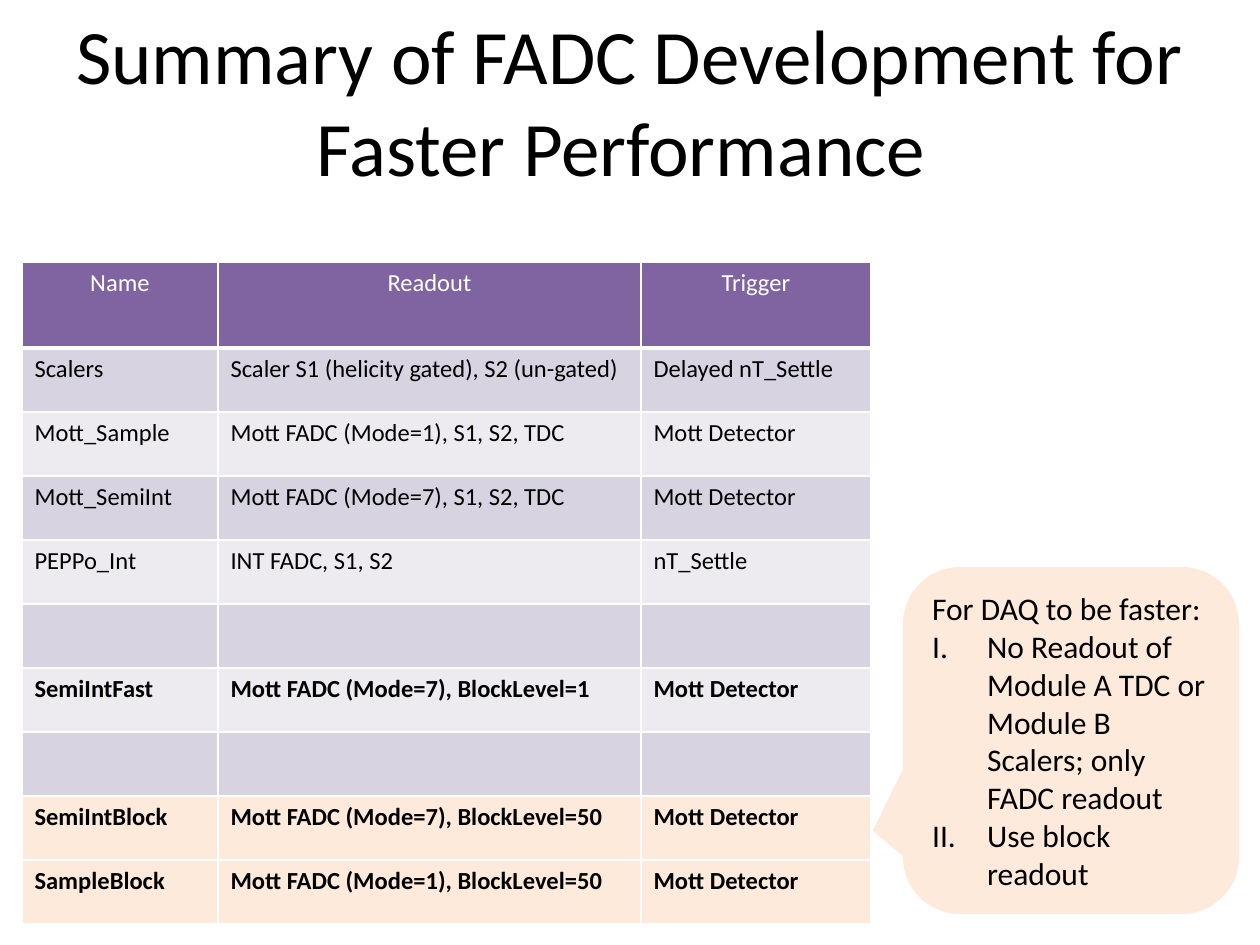
from lxml import etree
from pptx import Presentation
from pptx.dml.color import RGBColor
from pptx.enum.shapes import MSO_SHAPE
from pptx.enum.text import MSO_ANCHOR, PP_ALIGN
from pptx.oxml.ns import qn
from pptx.util import Pt

PX = 914400 // 126
CALLOUT = MSO_SHAPE.ROUNDED_RECTANGULAR_CALLOUT
MIDDLE = MSO_ANCHOR.MIDDLE
LEFT, CENTER = PP_ALIGN.LEFT, PP_ALIGN.CENTER
BLACK = RGBColor(0x00, 0x00, 0x00)
WHITE = RGBColor(0xFF, 0xFF, 0xFF)
PURPLE = RGBColor(0x80, 0x64, 0xA2)
LILAC = RGBColor(0xD8, 0xD3, 0xE0)
PALE = RGBColor(0xED, 0xEA, 0xF0)
PEACH = RGBColor(0xFD, 0xEA, 0xDA)


def write(para, text, size, color=BLACK, bold=False, align=LEFT):
    para.alignment = align
    run = para.add_run()
    run.text = text
    run.font.color.rgb = color
    look = {"name": "Calibri", "size": Pt(size), "bold": bold}
    for key, value in look.items():
        setattr(run.font, key, value)


def edge(cell, widths):
    """Draw white cell borders, with a width in points for each side."""
    props = cell._tc.get_or_add_tcPr()
    for side, width in widths.items():
        line = etree.SubElement(props, qn(f"a:ln{side}"), w=str(Pt(width)))
        fill = etree.SubElement(line, qn("a:solidFill"))
        etree.SubElement(fill, qn("a:srgbClr"), val=str(WHITE))


prs = Presentation()
prs.slide_width, prs.slide_height = 1260 * PX, 945 * PX
slide = prs.slides.add_slide(prs.slide_layouts[6])

# Title
title = slide.shapes.add_textbox(0, 0, 1260 * PX, 199 * PX).text_frame
title.word_wrap = True
title.vertical_anchor = MIDDLE
write(title.paragraphs[0], "Summary of FADC Development for Faster Performance ",
      44, align=CENTER)

# Table of readout modes
rows = [
    ("Name", "Readout", "Trigger"),
    ("Scalers", "Scaler S1 (helicity gated), S2 (un-gated)", "Delayed nT_Settle"),
    ("Mott_Sample", "Mott FADC (Mode=1), S1, S2, TDC", "Mott Detector"),
    ("Mott_SemiInt", "Mott FADC (Mode=7), S1, S2, TDC", "Mott Detector"),
    ("PEPPo_Int", "INT FADC, S1, S2", "nT_Settle"),
    ("", "", ""),
    ("SemiIntFast", "Mott FADC (Mode=7), BlockLevel=1", "Mott Detector"),
    ("", "", ""),
    ("SemiIntBlock", "Mott FADC (Mode=7), BlockLevel=50", "Mott Detector"),
    ("SampleBlock", "Mott FADC (Mode=1), BlockLevel=50", "Mott Detector"),
]
widths = [196, 423, 230]
head, step = 86, 64
high = head + step * (len(rows) - 1)
table = slide.shapes.add_table(len(rows), len(widths), 22 * PX, 262 * PX,
                               sum(widths) * PX, high * PX).table
for col, width in zip(table.columns, widths):
    col.width = width * PX
for r, row in enumerate(rows):
    table.rows[r].height = (step if r else head) * PX
    if r == 0:
        fill = PURPLE
    elif r >= 8:
        fill = PEACH
    else:
        fill = LILAC if r % 2 else PALE
    for c, text in enumerate(row):
        cell = table.cell(r, c)
        edge(cell, {"L": 1, "R": 1, "T": 1, "B": 1 if r else 3})
        cell.fill.solid()
        cell.fill.fore_color.rgb = fill
        if text:
            write(cell.text_frame.paragraphs[0], text, 14,
                  color=BLACK if r else WHITE, bold=r >= 6,
                  align=LEFT if r else CENTER)

# Callout beside the block readout rows
note = slide.shapes.add_shape(CALLOUT, 903 * PX, 567 * PX, 336 * PX, 347 * PX)
note.shadow.inherit = False
note.fill.solid()
note.fill.fore_color.rgb = PEACH
note.line.fill.background()
for i, value in enumerate((-0.59, 0.26, 0.17)):
    note.adjustments[i] = value
frame = note.text_frame
frame.word_wrap = True
frame.vertical_anchor = MIDDLE
write(frame.paragraphs[0], "For DAQ to be faster:", 18)
for text in ("No Readout of Module A TDC or Module B Scalers; only FADC readout",
             "Use block readout"):
    para = frame.add_paragraph()
    write(para, text, 18)
    props = para._p.get_or_add_pPr()
    props.set("marL", str(55 * PX))
    props.set("indent", str(-55 * PX))
    etree.SubElement(props, qn("a:buFont"), typeface="+mj-lt")
    etree.SubElement(props, qn("a:buAutoNum"), type="romanUcPeriod")

prs.save("out.pptx")
